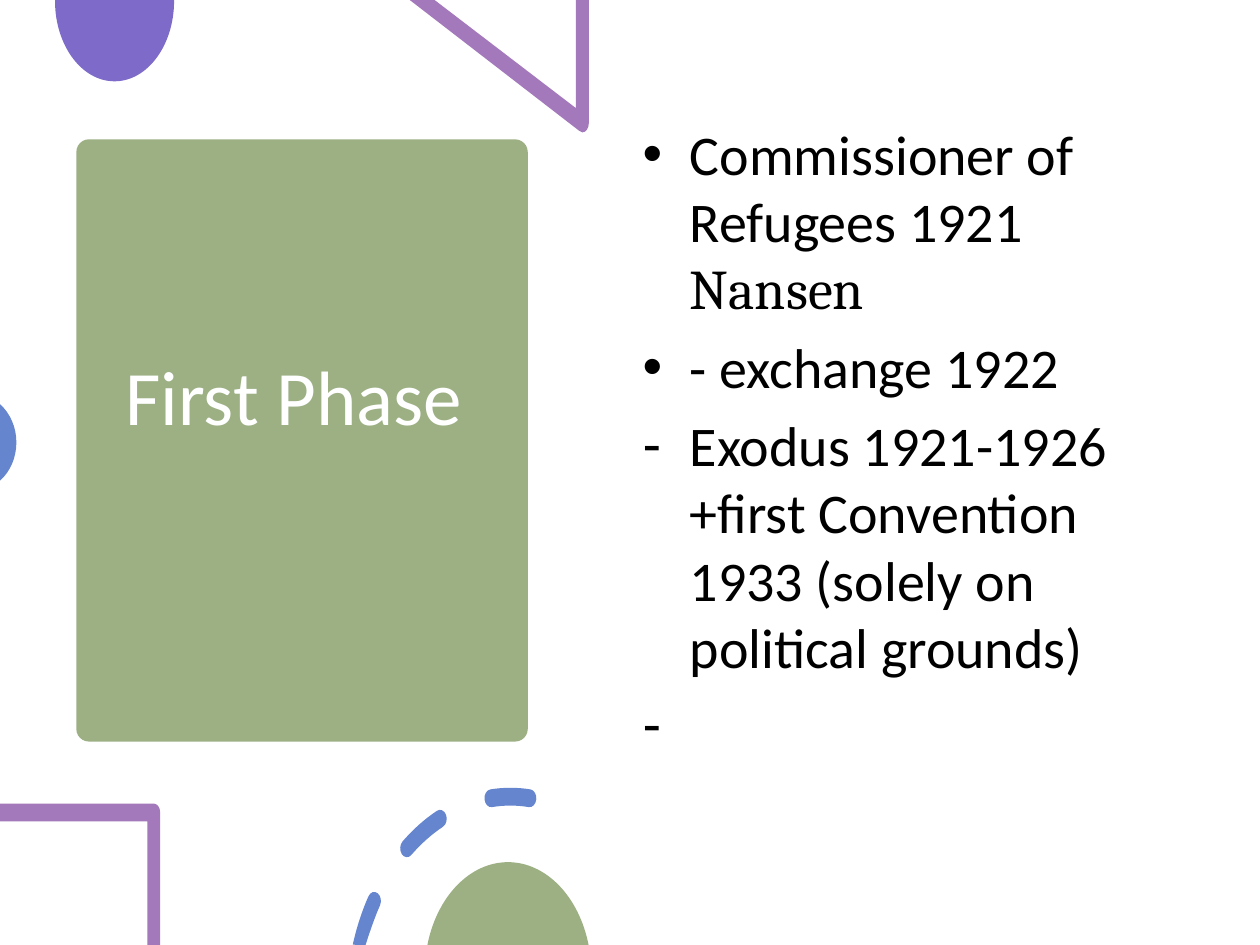
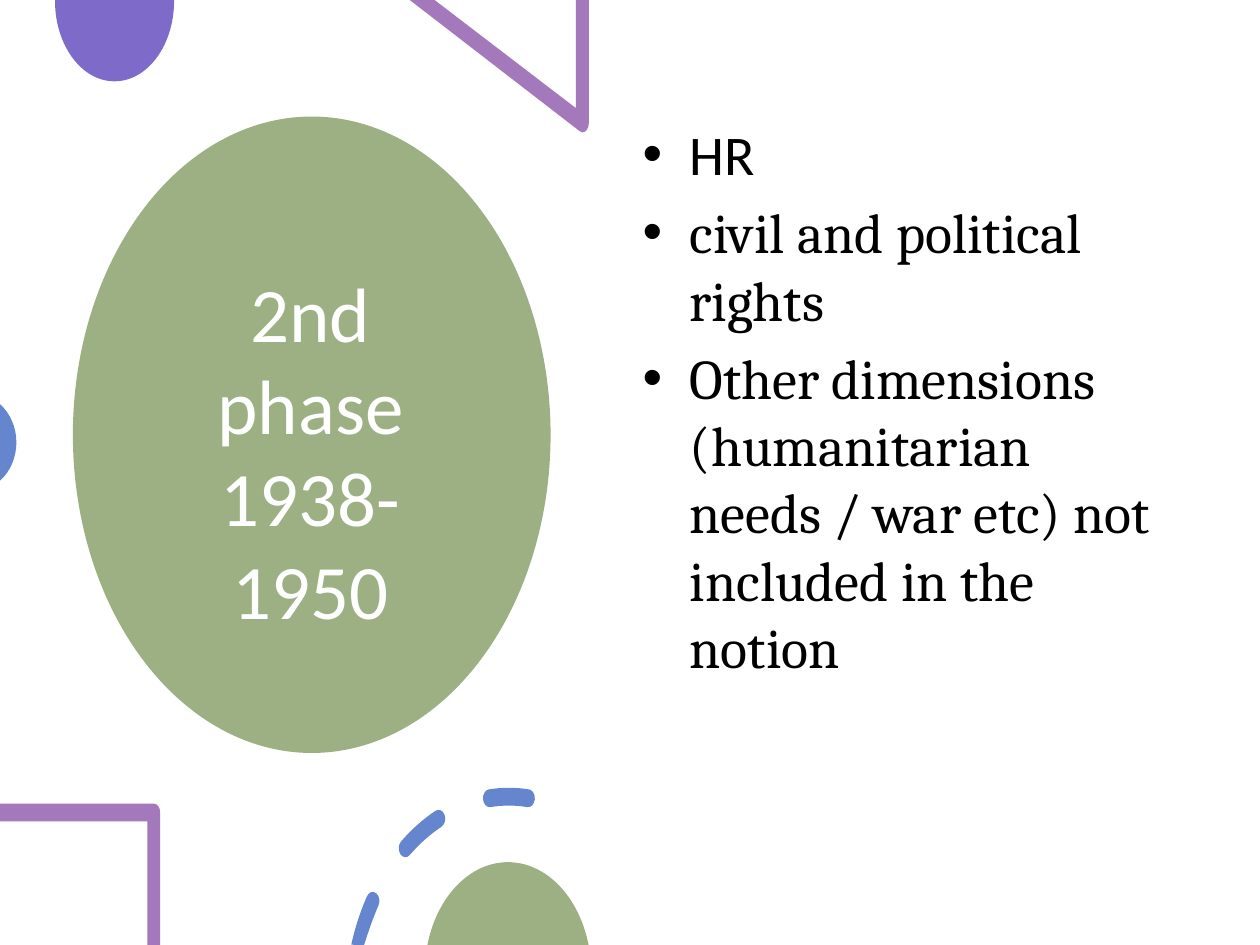
import math

import lxml.etree
import pptx
import pptx.dml.color
import pptx.enum.shapes
import pptx.enum.text
import pptx.oxml.ns
import pptx.util

Cm = pptx.util.Cm
qn = pptx.oxml.ns.qn
SLIDE_WIDTH, SLIDE_HEIGHT = 25.4, 19.05
GREEN, VIOLET, MAUVE, BLUE = "9CB084", "7E6BC9", "A379BB", "6585CF"
WHITE, BLACK = "FFFFFF", "000000"
SANS, SERIF = "Calibri", "Cambria"


def color(hex_string):
    return pptx.dml.color.RGBColor.from_string(hex_string)


def line(*points):
    """Straight steps: each step is a tuple holding only its end point."""
    return [(point,) for point in points]


def arc(center_x, center_y, radius_x, radius_y, start, end, parts=1):
    """A line to the start of an elliptical arc, then one Bezier step per part.

    Angles are in degrees, clockwise from the right; lengths in centimetres.
    """
    def point(angle, pull=0):
        cosine, sine = math.cos(angle), math.sin(angle)
        return (center_x + radius_x * (cosine - pull * sine),
                center_y + radius_y * (sine + pull * cosine))

    sweep = math.radians(end - start) / parts
    pull = 4 / 3 * math.tan(sweep / 4)
    angles = [math.radians(start) + sweep * i for i in range(parts + 1)]
    curves = [(point(a, pull), point(b, -pull), point(b)) for a, b in zip(angles, angles[1:])]
    return line(point(angles[0])) + curves


def ring_dash(center_x, center_y, radius, half_width, start, end, stretch=0.75):
    """A round-capped dash on a narrowed ring, cut flat at the slide's bottom edge."""
    def ring(r, a, b):
        return arc(center_x, center_y, r * stretch, r, a, b)

    def cap(angle, turn):
        (x, y), = ring(radius, angle, angle)[0]
        return arc(x, y, half_width * stretch, half_width, turn, turn + 180, 2)[1:]

    steps = (ring(radius + half_width, start, end) + cap(end, end)
             + ring(radius - half_width, end, start)[1:])
    if steps[-1][-1][1] < SLIDE_HEIGHT:
        steps += cap(start, start + 180)
    return [tuple((x, min(y, SLIDE_HEIGHT)) for x, y in step) for step in steps]


class Deck:
    def __init__(self):
        self.presentation = pptx.Presentation()
        self.presentation.slide_width = Cm(SLIDE_WIDTH)
        self.presentation.slide_height = Cm(SLIDE_HEIGHT)
        self.slide = None

    def new_slide(self):
        self.slide = self.presentation.slides.add_slide(self.presentation.slide_layouts[1])
        self.slide.background.fill.solid()
        self.slide.background.fill.fore_color.rgb = color(WHITE)

    def paint(self, shape, fill):
        shape.shadow.inherit = False
        shape.fill.solid()
        shape.fill.fore_color.rgb = color(fill)
        shape.line.fill.background()

    def panel(self, kind, box, corner=None):
        shape = self.slide.shapes.add_shape(kind, *map(Cm, box))
        if corner is not None:
            shape.adjustments[0] = corner
        self.paint(shape, GREEN)

    def outline(self, fill, *contours):
        builder = None
        for contour in contours:
            (x, y), *ends = [(Cm(step[-1][0]), Cm(step[-1][1])) for step in contour]
            if builder is None:
                builder = self.slide.shapes.build_freeform(x, y, scale=1.0)
            else:
                builder.move_to(x, y)
            builder.add_line_segments(ends, close=True)
        shape = builder.convert_to_shape()
        self.bend(shape, [step for contour in contours for step in contour])
        self.paint(shape, fill)

    def bend(self, shape, steps):
        """Turn the straight segments of curved steps into Bezier segments."""
        nodes = [node for node in shape.element.iter(qn("a:moveTo"), qn("a:lnTo"))]
        for node, step in zip(nodes, steps):
            if len(step) == 1:
                continue
            curve = lxml.etree.Element(qn("a:cubicBezTo"))
            for x, y in step:
                lxml.etree.SubElement(curve, qn("a:pt"), x=str(Cm(x) - shape.left),
                                      y=str(Cm(y) - shape.top))
            node.getparent().replace(node, curve)

    def place(self, shape, box):
        """Move a placeholder and bring it to the front."""
        shape.left, shape.top, shape.width, shape.height = map(Cm, box)
        shape.element.getparent().append(shape.element)
        frame = shape.text_frame
        frame.word_wrap = True
        frame.auto_size = pptx.enum.text.MSO_AUTO_SIZE.NONE
        return frame

    def run(self, paragraph, text, size, font, hex_color):
        run = paragraph.add_run()
        run.text = text
        run.font.size = pptx.util.Pt(size)
        run.font.name = font
        run.font.color.rgb = color(hex_color)

    def title(self, text, box, break_after=False):
        frame = self.place(self.slide.shapes.title, box)
        frame.vertical_anchor = pptx.enum.text.MSO_ANCHOR.MIDDLE
        paragraph = frame.paragraphs[0]
        paragraph.alignment = pptx.enum.text.PP_ALIGN.CENTER
        self.run(paragraph, text, 44, SANS, WHITE)
        if break_after:
            paragraph.add_line_break()

    def bullet(self, paragraph, mark):
        properties = paragraph._p.get_or_add_pPr()
        properties.set("marL", str(Cm(0.95)))
        properties.set("indent", str(-Cm(0.95)))
        lxml.etree.SubElement(properties, qn("a:buFont"), typeface="Arial")
        lxml.etree.SubElement(properties, qn("a:buChar"), char=mark)

    def body(self, items):
        """Each item is a bullet mark and its (text, font) runs."""
        frame = self.place(self.slide.placeholders[1], (12.7, 2.28, 10.95, 13.59))
        for index, (mark, runs) in enumerate(items):
            paragraph = frame.add_paragraph() if index else frame.paragraphs[0]
            self.bullet(paragraph, mark)
            for text, font in runs:
                self.run(paragraph, text, 32, font, BLACK)

    def top_decoration(self):
        # Half disc, triangle corner and disc at the left edge
        self.outline(VIOLET, line((3.51, 0), (1.11, 0)) + arc(2.31, 0.02, 1.2, 1.62, 180, 0, 2))
        self.outline(MAUVE, line((11.87, 0), (11.61, 0), (11.61, 2.18), (8.76, 0), (8.26, 0),
                                 (11.68, 2.64))
                     + [((11.7, 2.66), (11.72, 2.67), (11.74, 2.67)),
                        ((11.81, 2.67), (11.87, 2.59), (11.87, 2.49))])
        self.outline(BLUE, arc(-0.51, 8.92, 0.84, 0.97, -52.5, 52.5, 2))

    def bottom_decoration(self, ring_x):
        # Frame corner, dashed ring and half disc
        self.outline(MAUVE, line((0, 16.2), (0, 16.56), (2.97, 16.56), (2.97, SLIDE_HEIGHT),
                                 (3.23, SLIDE_HEIGHT))
                     + arc(3.1, 16.38, 0.13, 0.18, 0, -90))
        dashes = [(-163.5, -149.7), (-131, -116.5), (-97, -83)]
        self.outline(BLUE, *[ring_dash(ring_x, 20.3, 4.24, 0.18, *ends) for ends in dashes])
        self.outline(GREEN, arc(10.24, 19.62, 1.68, 2.24, -165.5, -14.5, 2))


def main():
    deck = Deck()
    shapes = pptx.enum.shapes.MSO_SHAPE

    # First phase
    deck.new_slide()
    deck.panel(shapes.ROUNDED_RECTANGLE, (1.54, 2.81, 9.1, 12.14), corner=0.028)
    deck.title("First Phase ", (2, 3.1, 8.2, 11.58), break_after=True)
    deck.top_decoration()
    deck.body([
        ("•", [("Commissioner of Refugees 1921 ", SANS), ("Nansen", SERIF)]),
        ("•", [("- exchange 1922", SANS)]),
        ("-", [("Exodus 1921-1926 +first Convention 1933 (solely on political grounds)", SANS)]),
        ("-", [(" ", SANS)]),
    ])
    deck.bottom_decoration(ring_x=10.29)

    # Second phase
    deck.new_slide()
    deck.panel(shapes.OVAL, (1.47, 2.35, 9.63, 12.83))
    deck.title("2nd phase 1938-1950", (2.88, 3.42, 6.76, 11.3))
    deck.top_decoration()
    deck.body([
        ("•", [("HR", SANS)]),
        ("•", [("civil and political rights", SERIF)]),
        ("•", [("Other dimensions (humanitarian needs / war etc) not included in the notion",
                SERIF)]),
    ])
    deck.bottom_decoration(ring_x=10.26)

    deck.presentation.save("out.pptx")


if __name__ == "__main__":
    main()
